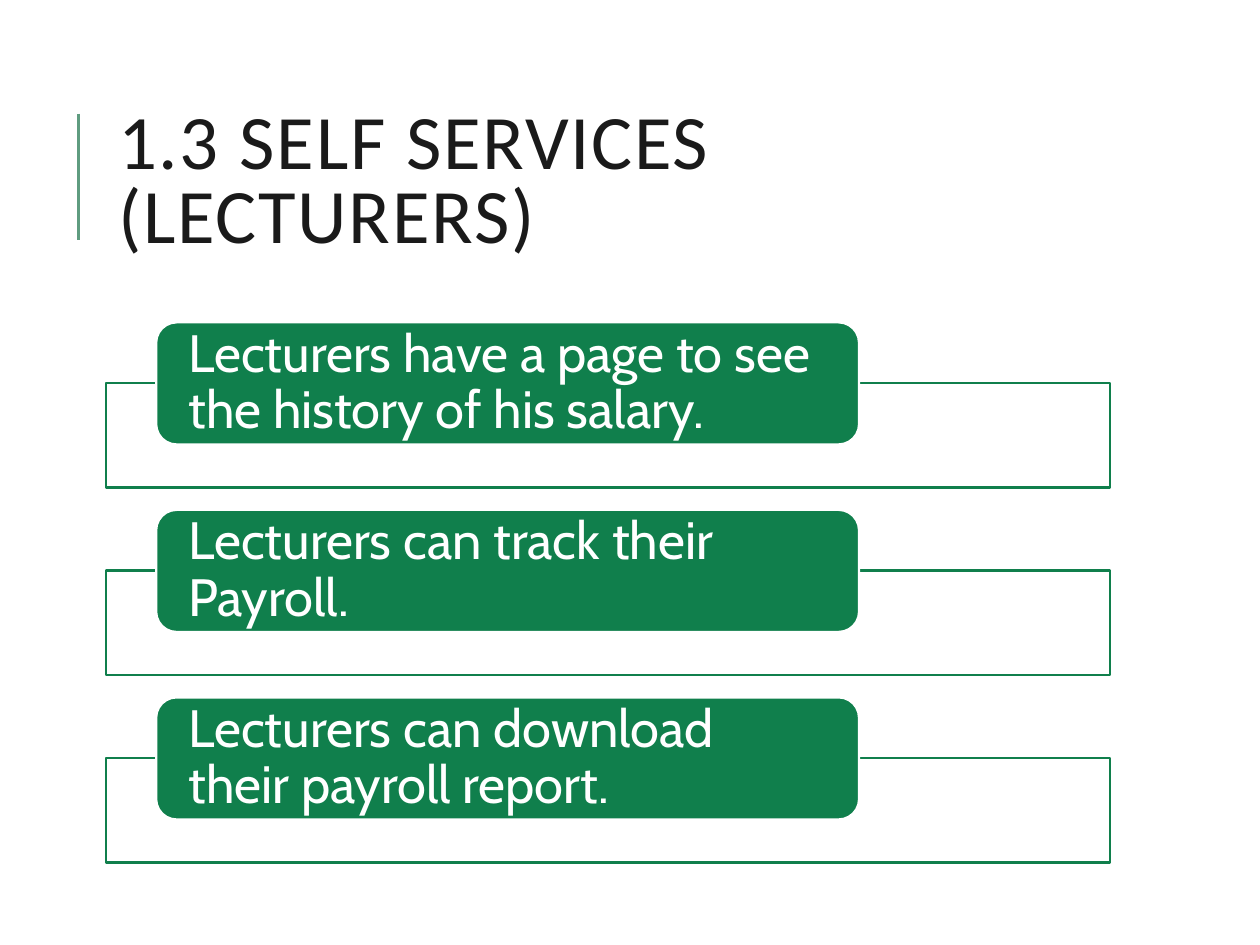
from lxml import etree
from pptx import Presentation, util as u
from pptx.dml.color import RGBColor
from pptx.enum import shapes, text
from pptx.oxml.ns import qn

GREEN = "107F4C"
WHITE = "FFFFFF"
ITEMS = (
    "Lecturers have a page to see the history of his salary.",
    "Lecturers can track their Payroll.",
    "Lecturers can download their payroll report.",
)


def tint(part, color):
    """Give a fill a solid colour from a hex string."""
    part.solid()
    part.fore_color.rgb = RGBColor.from_string(color)


def write(shape, words, font, size, color, lead, inset, track=0, after=0):
    """Put formatted, left-aligned text in a shape."""
    frame = shape.text_frame
    frame.word_wrap = True
    frame.auto_size = text.MSO_AUTO_SIZE.NONE
    frame.vertical_anchor = text.MSO_ANCHOR.MIDDLE
    frame.margin_left = frame.margin_right = u.Cm(inset)
    frame.margin_top = frame.margin_bottom = 0
    para = frame.paragraphs[0]
    para.alignment = text.PP_ALIGN.LEFT
    para.line_spacing = lead
    para.space_after = u.Pt(after)
    run = para.add_run()
    run.text = words
    run.font.name = font
    run.font.size = u.Pt(size)
    tint(run.font.fill, color)
    run.font._element.set("spc", str(track * 100))


def block(slide, kind, left, top, width, height, fill, line):
    """Draw a filled and outlined preset shape."""
    shape = slide.shapes.add_shape(kind, *map(u.Cm, (left, top, width, height)))
    shape.shadow.inherit = False
    tint(shape.fill, fill)
    tint(shape.line.fill, line)
    shape.line.width = u.Pt(1.25)
    return shape


def header(slide, left, top, width, height):
    """Place the title and the upright rule to its left."""
    title = slide.shapes.title
    title.left, title.top = u.Cm(left), u.Cm(top)
    title.width, title.height = u.Cm(width), u.Cm(height)
    write(title, "1.3 SELF SERVICES (LECTURERS)", font="Calibri", size=44,
          color="1A1A1A", lead=0.8, inset=0.25, track=1)
    x = u.Cm(left - 0.55)
    rule = slide.shapes.add_connector(
        shapes.MSO_CONNECTOR.STRAIGHT, x, u.Cm(top + 0.66), x, u.Cm(top + 3.2))
    tint(rule.line.fill, "5F9C80")
    rule.line.width = u.Pt(1.5)
    etree.SubElement(rule._element.spPr, qn("a:effectLst"))


def listing(slide, left, top, width, pitch):
    """Stack the items, each a label overlapping an open frame."""
    for row, words in enumerate(ITEMS):
        y = top + row * pitch
        block(slide, shapes.MSO_SHAPE.RECTANGLE, left, y + 1.22, width, 2.11,
              WHITE, GREEN)
        label = block(slide, shapes.MSO_SHAPE.ROUNDED_RECTANGLE, left + 1.02, y,
                      width * 0.7, 2.46, GREEN, WHITE)
        write(label, words, font="Cabin", size=30, color=WHITE, lead=0.9,
              inset=0.53, after=10.5)


def main():
    """Build and save the slide."""
    deck = Presentation()
    deck.slide_width, deck.slide_height = u.Cm(25.4), u.Cm(19.05)
    slide = deck.slides.add_slide(deck.slide_layouts[5])
    tint(slide.background.fill, WHITE)
    header(slide, 2.13, 1.63, 20.24, 4.17)
    listing(slide, 2.13, 6.5, 20.24, 3.78)
    deck.save("out.pptx")


if __name__ == "__main__":
    main()
